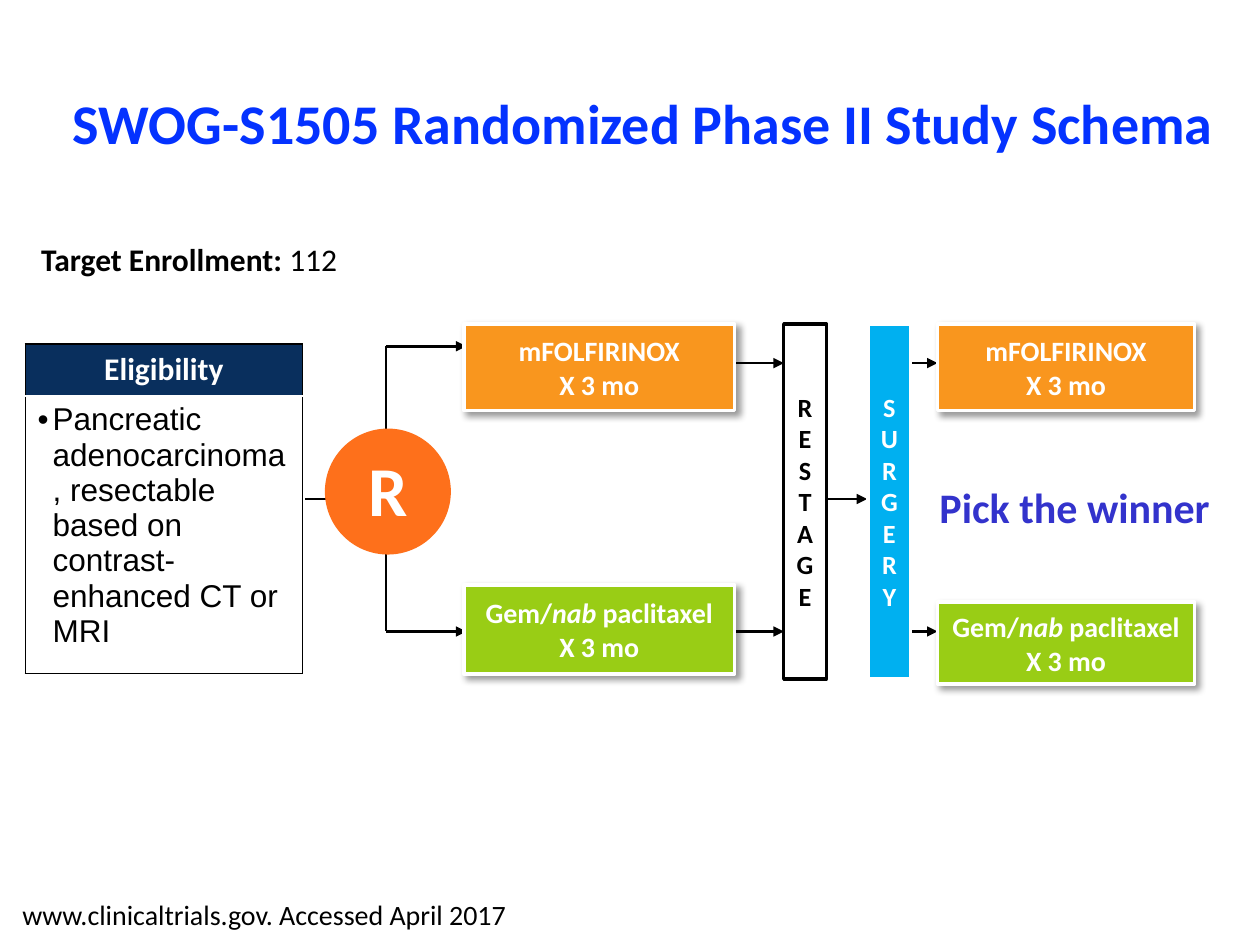
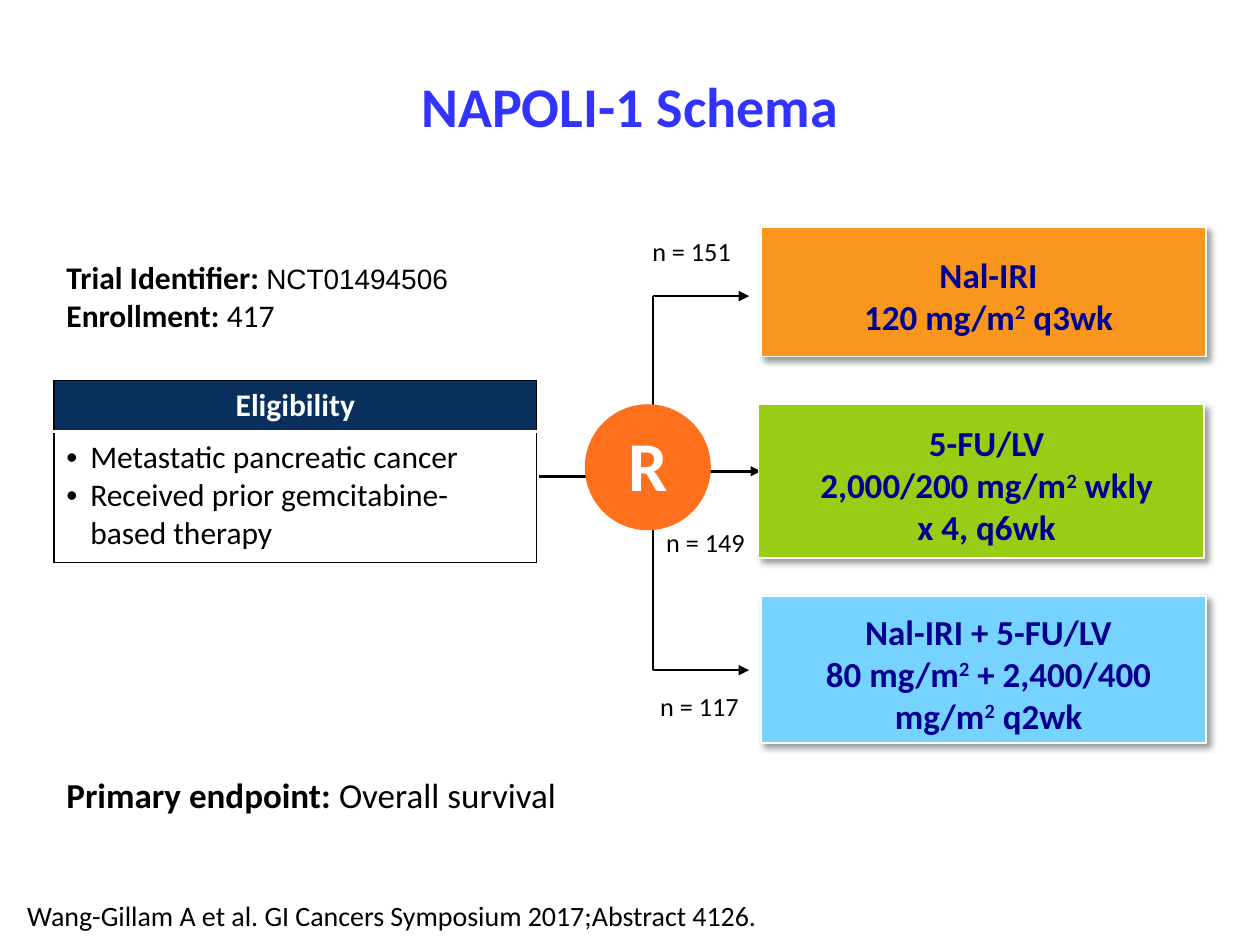
from lxml.etree import SubElement
from pptx import Presentation
from pptx.dml.color import RGBColor
from pptx.enum.shapes import MSO_CONNECTOR as Link, MSO_SHAPE as Preset
from pptx.enum.text import MSO_ANCHOR as Anchor, PP_ALIGN as Align
from pptx.oxml.ns import qn
from pptx.util import Cm, Pt

BLACK, WHITE = "000000", "FFFFFF"
NAVY, DEEP_BLUE, SKY, CYAN = "092F5D", "000090", "76D3FF", "00B0F0"
ORANGE, GREEN, HUB = "F9961E", "99CD15", "FE701B"
BOLD, PLAIN, ITALIC = {"bold": True}, {"bold": False}, {"italic": True}
SUPER = {"raised": True}
SQUARED = ("2", SUPER)
DIAMETER = 2.54

FOLFIRINOX = ["mFOLFIRINOX", "X 3 mo"]
GEM_NAB = [["Gem/", ("nab", ITALIC), " paclitaxel"], "X 3 mo"]

SWOG = {
    "title": "SWOG-S1505 Randomized Phase II Study Schema",
    "title_color": "0432FF",
    "title_area": (1.45, 0.71, 23.04, 3.68),
    "footer": "www.clinicaltrials.gov. Accessed April 2017",
    "footer_area": (0.2, 17.96, 10.39, 0.94),
    "facts": [[("Target Enrollment: ", BOLD), "112"]],
    "facts_area": (0.58, 4.72, 9.6, 1.02),
    "criteria": ["Pancreatic adenocarcinoma, resectable based on "
                 "contrast-enhanced CT or MRI"],
    "criteria_font": "Arial",
    "table_area": (0.51, 6.93, 5.59),
    "rows": (1.05, 5.59),
    "indent": 0.3,
    "stub": (6.15, 7.34, 10.06),
    "hub": (6.55, 8.64),
    "branch": (7.78, 9.4, 6.98, 12.73),
}
SWOG_ARROWS = [
    (14.17, 15.8, 7.32), (14.17, 15.8, 12.73), (16.66, 17.48, 10.06),
    (17.96, 18.9, 7.32), (17.96, 18.9, 12.73),
]
SWOG_ARMS = [
    (FOLFIRINOX, ORANGE, (9.35, 6.53, 5.46, 1.75)),
    (GEM_NAB, GREEN, (9.35, 11.79, 5.46, 1.8)),
    (FOLFIRINOX, ORANGE, (18.9, 6.53, 5.18, 1.75)),
    (GEM_NAB, GREEN, (18.9, 12.14, 5.18, 1.65)),
]
SWOG_STAGES = [
    ("RESTAGE", 15.8, WHITE, BLACK, BLACK),
    ("SURGERY", 17.5, CYAN, WHITE, WHITE),
]

NAPOLI = {
    "title": "NAPOLI-1 Schema",
    "title_color": "3333FF",
    "title_area": (1.9, 0.33, 21.6, 3.78),
    "footer": "Wang-Gillam A et al. GI Cancers Symposium 2017;Abstract 4126.",
    "footer_area": (0.3, 17.98, 23.01, 0.94),
    "facts": [
        [("Trial Identifier: ", BOLD),
         ("NCT01494506", {"font": "Arial", "size": 16})],
        [("Enrollment: ", BOLD), "417"],
    ],
    "facts_area": (1.09, 5.08, 10.11, 1.8),
    "criteria": ["Metastatic pancreatic cancer",
                 "Received prior gemcitabine-based therapy"],
    "criteria_font": "Calibri",
    "table_area": (1.09, 7.67, 9.73),
    "rows": (1.03, 2.64),
    "indent": 0.48,
    "stub": (10.87, 12.55, 9.6),
    "hub": (11.79, 8.15),
    "branch": (13.16, 15.1, 5.97, 13.51),
}
NAPOLI_ARMS = [
    (["Nal-IRI", ["120 mg/m", SQUARED, " q3wk"]],
     ORANGE, (15.34, 4.57, 8.97, 2.62)),
    (["5-FU/LV", ["2,000/200 mg/m", SQUARED, " wkly"], "x 4, q6wk"],
     GREEN, (15.29, 8.15, 8.99, 3.1)),
    (["Nal-IRI + 5-FU/LV",
      ["80 mg/m", SQUARED, " + 2,400/400 mg/m", SQUARED, " q2wk"]],
     SKY, (15.34, 12.01, 8.97, 2.97)),
]
NAPOLI_COUNTS = [
    ("n = 151", 12.9, 4.62), ("n = 149", 13.18, 10.49), ("n = 117", 13.06, 13.79),
]


def rgb(color):
    return RGBColor.from_string(color)


def write(frame, paragraphs, size, color=BLACK, bold=False, font="Calibri",
          align=Align.LEFT, spacing=None, indent=None):
    for number, content in enumerate(paragraphs):
        para = frame.paragraphs[0] if number == 0 else frame.add_paragraph()
        para.alignment = align
        if spacing:
            para.line_spacing = spacing
        if indent:
            properties = para._p.get_or_add_pPr()
            properties.set("marL", str(Cm(indent)))
            properties.set("indent", str(-Cm(indent)))
            SubElement(properties, qn("a:buFont"), typeface="Arial")
            SubElement(properties, qn("a:buChar"), char="•")
        for part in [content] if isinstance(content, str) else content:
            text, style = (part, {}) if isinstance(part, str) else part
            span = para.add_run()
            span.text = text
            span.font.name = style.get("font", font)
            span.font.size = Pt(style.get("size", size))
            span.font.bold = style.get("bold", bold)
            span.font.italic = style.get("italic", False)
            span.font.color.rgb = rgb(color)
            if style.get("raised"):
                span._r.get_or_add_rPr().set("baseline", "30000")


def set_margins(frame, left, top, right, bottom):
    frame.margin_left, frame.margin_top = Cm(left), Cm(top)
    frame.margin_right, frame.margin_bottom = Cm(right), Cm(bottom)


def add_text(page, area, paragraphs, size, wrap=True, **style):
    box = page.shapes.add_textbox(*map(Cm, area))
    box.text_frame.word_wrap = wrap
    write(box.text_frame, paragraphs, size, **style)
    return box.text_frame


def add_block(page, area, fill, paragraphs, size, color=WHITE, outline=None,
              weight=2, preset=Preset.RECTANGLE, shadow=False):
    block = page.shapes.add_shape(preset, *map(Cm, area))
    block.shadow.inherit = False
    block.fill.solid()
    block.fill.fore_color.rgb = rgb(fill)
    if outline:
        block.line.color.rgb = rgb(outline)
        block.line.width = Pt(weight)
    else:
        block.line.fill.background()
    if shadow:
        effects = block._element.spPr.find(qn("a:effectLst"))
        outer = SubElement(effects, qn("a:outerShdw"), blurRad=str(Pt(4)),
                           dist=str(Pt(3)), dir="2700000", algn="tl",
                           rotWithShape="0")
        tint = SubElement(outer, qn("a:srgbClr"), val=BLACK)
        SubElement(tint, qn("a:alpha"), val="40000")
    frame = block.text_frame
    frame.word_wrap = True
    frame.vertical_anchor = Anchor.MIDDLE
    write(frame, paragraphs, size, color=color, bold=True, align=Align.CENTER)
    return frame


def add_line(page, start, end, arrow=False):
    line = page.shapes.add_connector(Link.STRAIGHT, *map(Cm, start + end))
    line.line.color.rgb = rgb(BLACK)
    line.line.width = Pt(1.5)
    if arrow:
        SubElement(line.line._get_or_add_ln(), qn("a:tailEnd"), type="triangle")
    SubElement(line._element.spPr, qn("a:effectLst"))


def add_arrow(page, left, right, height):
    add_line(page, (left, height), (right, height), arrow=True)


def style_cell(cell, fill, top, bottom):
    sides = {"L": (BLACK, 1), "R": (BLACK, 1), "T": top, "B": bottom}
    properties = cell._tc.get_or_add_tcPr()
    for side, (color, weight) in sides.items():
        border = SubElement(properties, qn(f"a:ln{side}"), w=str(Pt(weight)))
        paint = SubElement(border, qn("a:solidFill"))
        SubElement(paint, qn("a:srgbClr"), val=color)
    cell.fill.solid()
    cell.fill.fore_color.rgb = rgb(fill)
    set_margins(cell, 0.25, 0.13, 0.25, 0.13)


def add_eligibility(page, study):
    left, top, width = study["table_area"]
    heights = study["rows"]
    table = page.shapes.add_table(
        2, 1, *map(Cm, (left, top, width, sum(heights)))).table
    table.horz_banding = False
    for row, height in zip(table.rows, heights):
        row.height = Cm(height)
    header, body = table.cell(0, 0), table.cell(1, 0)
    style_cell(header, NAVY, top=(BLACK, 1), bottom=(WHITE, 1.5))
    style_cell(body, WHITE, top=(WHITE, 1.5), bottom=(BLACK, 1))
    header.vertical_anchor = Anchor.MIDDLE
    write(header.text_frame, ["Eligibility"], 18, color=WHITE, bold=True,
          align=Align.CENTER)
    write(body.text_frame, study["criteria"], 18,
          font=study["criteria_font"], indent=study["indent"])


def add_randomization(page, study):
    left, right, height = study["stub"]
    add_line(page, (left, height), (right, height))
    stem, tip, upper, lower = study["branch"]
    add_line(page, (stem, upper), (stem, lower))
    for height in (upper, lower):
        add_arrow(page, stem, tip, height)
    frame = add_block(page, study["hub"] + (DIAMETER, DIAMETER), HUB, ["R"], 40,
                      preset=Preset.OVAL)
    set_margins(frame, 0, 0, 0, 0.13)


def start_page(deck, study):
    page = deck.slides.add_slide(deck.slide_layouts[6])
    title = add_text(page, study["title_area"], [study["title"]], 32,
                     color=study["title_color"], bold=True,
                     align=Align.CENTER, spacing=0.88)
    title.vertical_anchor = Anchor.MIDDLE
    set_margins(title, 0, 0, 0, 0)
    add_text(page, study["footer_area"], [study["footer"]], 16)
    add_text(page, study["facts_area"], study["facts"], 18)
    add_eligibility(page, study)
    return page


def build_swog(deck):
    page = start_page(deck, SWOG)
    add_randomization(page, SWOG)
    for arrow in SWOG_ARROWS:
        add_arrow(page, *arrow)
    for label, fill, area in SWOG_ARMS:
        add_block(page, area, fill, label, 16, outline=WHITE, shadow=True)
    for word, left, fill, outline, color in SWOG_STAGES:
        add_block(page, (left, 6.53, 0.86, 7.16), fill, list(word), 15,
                  color=color, outline=outline)
    add_text(page, (18.69, 9.58, 6.02, 1.27), ["Pick the winner"], 24,
             wrap=False, color="3333CC", bold=True)


def build_napoli(deck):
    page = start_page(deck, NAPOLI)
    add_arrow(page, 13.39, 15.34, 9.5)
    add_randomization(page, NAPOLI)
    for label, fill, area in NAPOLI_ARMS:
        frame = add_block(page, area, fill, label, 20, color=DEEP_BLUE,
                          outline=WHITE, weight=1, shadow=True)
        set_margins(frame, 0.46, 0.2, 0.25, 0.05)
    for count, left, top in NAPOLI_COUNTS:
        add_text(page, (left, top, 2.11, 0.89), [count], 15, wrap=False)
    add_text(page, (1.09, 15.47, 22.61, 1.12),
             [[("Primary endpoint: ", BOLD), "Overall survival"]], 20)


def main():
    deck = Presentation()
    deck.slide_width, deck.slide_height = Cm(25.4), Cm(19.05)
    build_swog(deck)
    build_napoli(deck)
    deck.save("out.pptx")


if __name__ == "__main__":
    main()
